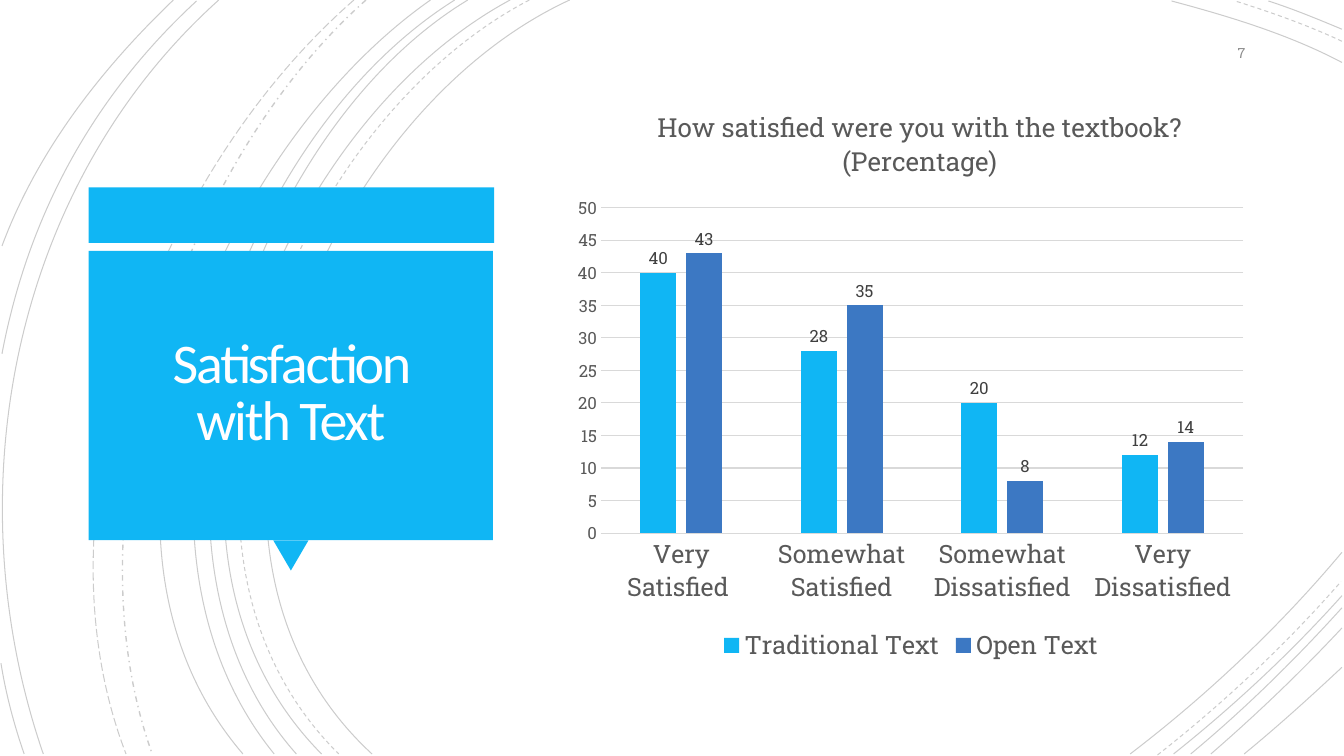
from dataclasses import dataclass
from typing import NamedTuple

from lxml import etree
from pptx import Presentation
from pptx.chart.data import CategoryChartData
from pptx.dml.color import RGBColor
from pptx.enum.chart import XL_CHART_TYPE, XL_LABEL_POSITION, XL_LEGEND_POSITION, XL_TICK_MARK
from pptx.enum.dml import MSO_LINE
from pptx.enum.shapes import MSO_SHAPE
from pptx.enum.text import MSO_ANCHOR, MSO_AUTO_SIZE, PP_ALIGN
from pptx.oxml.ns import qn
from pptx.shapes.shapetree import GroupShapes
from pptx.slide import Slide
from pptx.text.text import Font, TextFrame
from pptx.util import Inches, Pt

SOLID, DASH = MSO_LINE.SOLID, MSO_LINE.DASH
LONG_DASH, DASH_DOT = MSO_LINE.LONG_DASH, MSO_LINE.DASH_DOT
RECTANGLE, TRIANGLE = MSO_SHAPE.RECTANGLE, MSO_SHAPE.ISOSCELES_TRIANGLE
CENTER, RIGHT, MIDDLE = PP_ALIGN.CENTER, PP_ALIGN.RIGHT, MSO_ANCHOR.MIDDLE
TITLE_ONLY_LAYOUT = 5
COLUMNS, ROWS, CELL = 13.33, 7.5, Inches(1)  # grid of square cells


@dataclass(frozen=True)
class Theme:
    accent: RGBColor = RGBColor(0x10, 0xB6, 0xF4)
    second: RGBColor = RGBColor(0x3C, 0x78, 0xC3)
    title: RGBColor = RGBColor(0xFF, 0xFE, 0xFF)
    text: RGBColor = RGBColor(0x59, 0x59, 0x59)
    label: RGBColor = RGBColor(0x40, 0x40, 0x40)
    number: RGBColor = RGBColor(0x8C, 0x8C, 0x8C)
    grid: RGBColor = RGBColor(0xD9, 0xD9, 0xD9)
    arc: RGBColor = RGBColor(0, 0, 0)
    title_font: str = "Calibri"
    body_font: str = "Roboto Slab"
    title_size: float = 40
    chart_title_size: float = 18.7
    large_size: float = 18
    small_size: float = 12
    number_size: float = 10
    hairline: float = 0.75


THEME = Theme()


class Box(NamedTuple):
    left: float
    top: float
    width: float
    height: float

    def lengths(self) -> tuple[int, ...]:
        return tuple(cells(value) for value in self)


class Arc(NamedTuple):
    points: tuple[tuple[float, float], ...]  # start, two controls, end
    dash: MSO_LINE = SOLID
    weight: float = THEME.hairline


class Block(NamedTuple):
    kind: MSO_SHAPE
    box: Box
    rotation: int = 0


class Series(NamedTuple):
    name: str
    values: tuple[int, ...]
    color: RGBColor


ARCS = (
    Arc(((5.65, 0), (3.15, 1.15), (1.43, 5.4), (3.69, 7.48))),
    Arc(((13.31, 0.62), (12.78, 0.34), (12.18, 0.16), (11.62, 0.01))),
    Arc(((11.21, 7.48), (11.97, 6.9), (12.69, 6.22), (13.31, 5.48))),
    Arc(((5.25, 0), (2.85, 1.25), (1.23, 5.37), (3.36, 7.48)), DASH),
    Arc(((13.31, 0.41), (12.97, 0.25), (12.6, 0.12), (12.25, 0.01)), DASH),
    Arc(((11.48, 7.49), (12.13, 6.98), (12.75, 6.4), (13.3, 5.77)), DASH),
    Arc(((5.06, 0), (2.7, 1.27), (1.1, 5.37), (3.19, 7.48))),
    Arc(((13.31, 0.29), (13.07, 0.19), (12.83, 0.09), (12.58, 0.01))),
    Arc(((11.64, 7.48), (12.23, 7.01), (12.8, 6.48), (13.31, 5.91))),
    Arc(((4.64, 0), (2.44, 1.33), (1.1, 5.41), (2.94, 7.48))),
    Arc(((11.81, 7.48), (12.34, 7.04), (12.84, 6.55), (13.31, 6.03))),
    Arc(((4.51, 0), (2.31, 1.38), (0.97, 5.33), (2.72, 7.48))),
    Arc(((12.01, 7.48), (12.46, 7.09), (12.9, 6.67), (13.31, 6.23))),
    Arc(((4.27, 0), (2.17, 1.47), (0.53, 5.29), (2.41, 7.48))),
    Arc(((12.34, 7.48), (12.67, 7.21), (12.99, 6.92), (13.31, 6.62))),
    Arc(((3.63, 0), (1.76, 1.66), (0.65, 5.09), (1.51, 7.48)), DASH_DOT, 1),
    Arc(((3.51, 0), (1.57, 1.69), (0.29, 4.99), (1.25, 7.48)), LONG_DASH),
    Arc(((2.17, 0), (0.11, 1.85), (-0.46, 4.9), (0.43, 7.48))),
    Arc(((1.95, 0.01), (0.92, 0.96), (0.28, 2.14), (0.02, 3.51))),
    Arc(((0.01, 6.58), (0.06, 6.89), (0.14, 7.19), (0.24, 7.48))),
    Arc(((1.72, 0), (1, 0.69), (0.37, 1.5), (0.02, 2.44))),
)
CALLOUT = (
    Block(RECTANGLE, Box(0.88, 1.86, 4.02, 0.55)),
    Block(TRIANGLE, Box(2.71, 5.36, 0.35, 0.3), 180),
    Block(RECTANGLE, Box(0.88, 2.49, 4.01, 2.87)),
)
TITLE_BOX, NUMBER_BOX = Box(0.97, 2.57, 3.83, 2.69), Box(11.45, 0.35, 1, 0.35)
CHART_BOX, PLOT_BOX = Box(5.6, 0.88, 6.87, 5.74), Box(5.96, 2.06, 6.37, 3.23)
CHART_TITLE_AT = (6.49, 1.04)
CHART_TITLE = ("How satisfied were you with the textbook?", "(Percentage)")
CATEGORIES = ("Very Satisfied ", "Somewhat Satisfied", "Somewhat Dissatisfied", "Very Dissatisfied")
SERIES = (Series("Traditional Text", (40, 28, 20, 12), THEME.accent),
          Series("Open Text", (43, 35, 8, 14), THEME.second))


def cells(count: float) -> int:
    return round(count * CELL)


def style_font(font: Font, size: float, color: RGBColor, name: str = THEME.body_font) -> None:
    font.size, font.name, font.bold = Pt(size), name, False
    font.color.rgb = color


def write(frame: TextFrame, lines: tuple[str, ...], align: PP_ALIGN, size: float,
          color: RGBColor, name: str = THEME.body_font) -> None:
    for index, line in enumerate(lines):
        paragraph = frame.add_paragraph() if index else frame.paragraphs[0]
        paragraph.alignment = align
        run = paragraph.add_run()
        run.text = line
        style_font(run.font, size, color, name)


def draw_arc(shapes: GroupShapes, arc: Arc) -> None:
    start, *others = [(cells(x), cells(y)) for x, y in arc.points]
    builder = shapes.build_freeform(*start)
    builder.add_line_segments(others, close=False)
    shape = builder.convert_to_shape()
    # Merge the three segments into one cubic curve
    segments = shape.element.xpath(".//a:lnTo")
    curve = etree.SubElement(segments[0].getparent(), qn("a:cubicBezTo"))
    for segment in segments:
        curve.append(segment[0])
        segment.getparent().remove(segment)
    shape.shadow.inherit = False
    shape.fill.background()
    shape.line.color.rgb = THEME.arc
    shape.line.width, shape.line.dash_style = Pt(arc.weight), arc.dash
    color = shape.element.xpath(".//a:ln//a:srgbClr")[0]
    etree.SubElement(color, qn("a:alpha")).set("val", "20000")


def draw_block(shapes: GroupShapes, block: Block) -> None:
    shape = shapes.add_shape(block.kind, *block.box.lengths())
    shape.rotation, shape.shadow.inherit = block.rotation, False
    shape.fill.solid()
    shape.fill.fore_color.rgb = THEME.accent
    shape.line.fill.background()


def draw_title(slide: Slide) -> None:
    title = slide.shapes.title
    title.left, title.top, title.width, title.height = TITLE_BOX.lengths()
    title.element.getparent().append(title.element)  # in front of the callout
    frame = title.text_frame
    frame.word_wrap, frame.auto_size, frame.vertical_anchor = True, MSO_AUTO_SIZE.NONE, MIDDLE
    frame.margin_left = frame.margin_right = frame.margin_top = frame.margin_bottom = cells(0.25)
    write(frame, ("Satisfaction with Text",), CENTER, THEME.title_size, THEME.title, THEME.title_font)
    frame.paragraphs[0].line_spacing = 0.85
    title.element.xpath(".//a:rPr")[0].set("spc", "-150")


def set_layout(parent: etree._Element, index: int, target: dict[str, str],
               left: float, top: float, *size: float) -> None:
    for old in parent.findall(qn("c:layout")):
        parent.remove(old)
    layout = etree.Element(qn("c:layout"))
    manual = etree.SubElement(layout, qn("c:manualLayout"))
    shares = ((left - CHART_BOX.left) / CHART_BOX.width, (top - CHART_BOX.top) / CHART_BOX.height,
              *(part / whole for part, whole in zip(size, CHART_BOX[2:])))
    for tag, value in {**target, "xMode": "edge", "yMode": "edge", **dict(zip("xywh", shares))}.items():
        etree.SubElement(manual, qn(f"c:{tag}")).set("val", str(value))
    parent.insert(index, layout)


def draw_chart(slide: Slide) -> None:
    data = CategoryChartData()
    data.categories = CATEGORIES
    for series in SERIES:
        data.add_series(series.name, series.values)
    chart = slide.shapes.add_chart(XL_CHART_TYPE.COLUMN_CLUSTERED, *CHART_BOX.lengths(), data).chart
    style_font(chart.font, THEME.number_size, THEME.arc)
    # Title and legend
    write(chart.chart_title.text_frame, CHART_TITLE, CENTER, THEME.chart_title_size, THEME.text)
    chart.has_legend = True
    chart.legend.position, chart.legend.include_in_layout = XL_LEGEND_POSITION.BOTTOM, False
    style_font(chart.legend.font, THEME.large_size, THEME.text)
    # Axes
    category, value = chart.category_axis, chart.value_axis
    for axis, size in ((category, THEME.large_size), (value, THEME.small_size)):
        axis.major_tick_mark = axis.minor_tick_mark = XL_TICK_MARK.NONE
        style_font(axis.tick_labels.font, size, THEME.text)
    value.minimum_scale, value.maximum_scale, value.major_unit = 0, 50, 5
    value.format.line.fill.background()
    for line in (category.format.line, value.major_gridlines.format.line):
        line.color.rgb, line.width = THEME.grid, Pt(THEME.hairline)
    # Columns and their labels
    plot = chart.plots[0]
    plot.gap_width, plot.overlap, plot.vary_by_categories = 219, -27, False
    for column, series in zip(plot.series, SERIES):
        column.format.fill.solid()
        column.format.fill.fore_color.rgb = series.color
        labels = column.data_labels
        labels.show_value, labels.position = True, XL_LABEL_POSITION.OUTSIDE_END
        style_font(labels.font, THEME.small_size, THEME.label)
    # Places of the title and the plot
    root = chart._chartSpace
    set_layout(root.xpath("c:chart/c:title")[0], 1, {}, *CHART_TITLE_AT)
    set_layout(root.xpath("c:chart/c:plotArea")[0], 0, {"layoutTarget": "inner"}, *PLOT_BOX)


def main() -> None:
    presentation = Presentation()
    presentation.slide_width, presentation.slide_height = cells(COLUMNS), cells(ROWS)
    slide = presentation.slides.add_slide(presentation.slide_layouts[TITLE_ONLY_LAYOUT])
    for items, draw in ((ARCS, draw_arc), (CALLOUT, draw_block)):
        group = slide.shapes.add_group_shape()
        for item in items:
            draw(group.shapes, item)
    draw_title(slide)
    draw_chart(slide)
    number = slide.shapes.add_textbox(*NUMBER_BOX.lengths()).text_frame
    number.word_wrap, number.vertical_anchor = True, MIDDLE
    write(number, ("7",), RIGHT, THEME.number_size, THEME.number)
    presentation.save("out.pptx")


if __name__ == "__main__":
    main()
